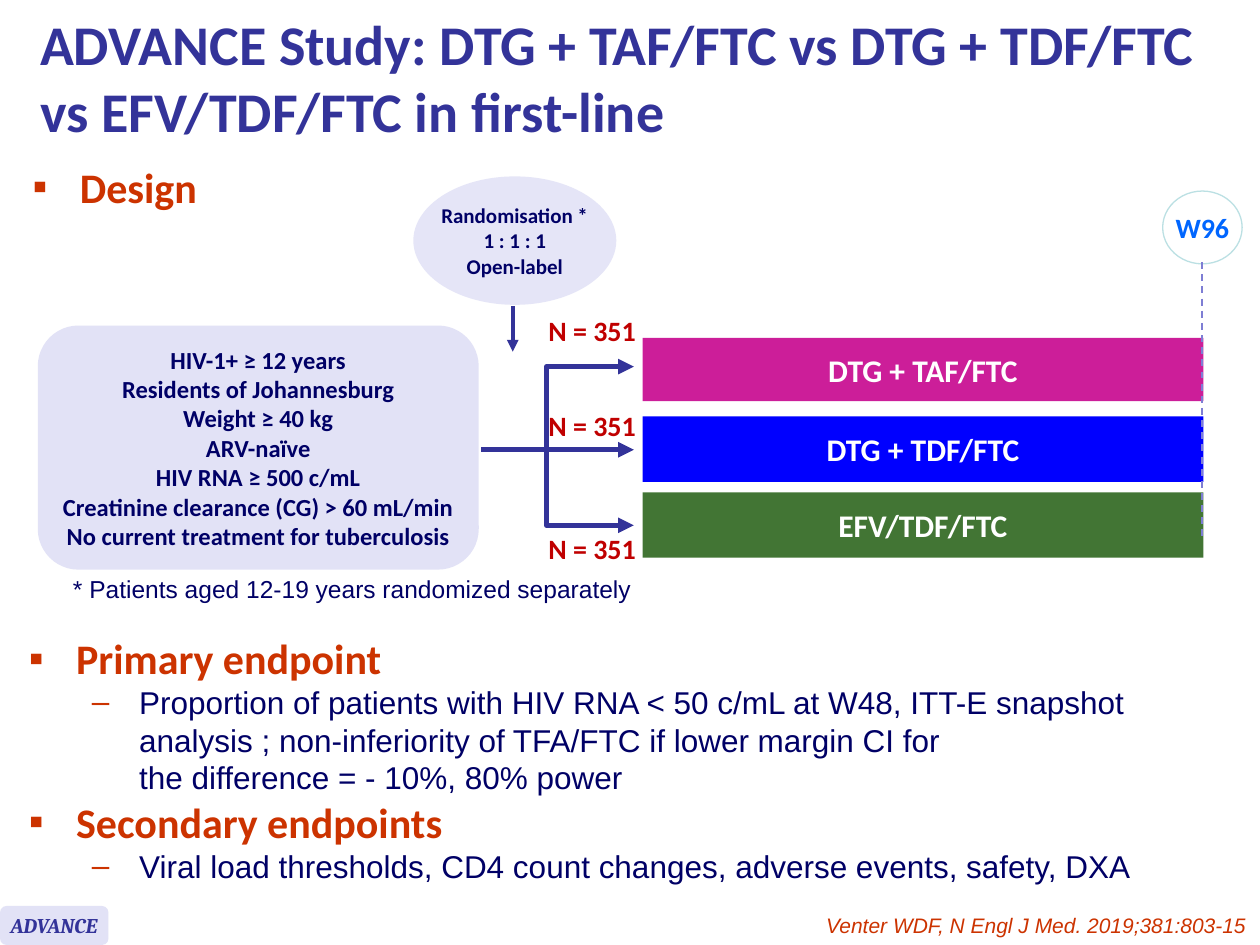
from dataclasses import dataclass

from lxml import etree
from pptx import Presentation
from pptx.dml.color import RGBColor
from pptx.enum import dml, shapes, text
from pptx.oxml import ns
from pptx.util import Pt


@dataclass(frozen=True)
class Theme:
    heading: str = "CC3300"
    body: str = "000066"
    accent: str = "333399"
    count: str = "C00000"
    week: str = "0066FF"
    week_ring: str = "BBE0E3"
    timeline: str = "7E7ED4"
    panel: str = "E2E2F6"
    bubble: str = "E5E5F7"
    white: str = "FFFFFF"
    taf: str = "CC1E99"
    tdf: str = "0000FF"
    efv: str = "427534"
    title_size: int = 32
    heading_size: int = 24
    body_size: int = 18
    count_size: int = 16
    note_size: int = 14
    small_size: int = 12


theme = Theme()
LEFT, CENTER, RIGHT = text.PP_ALIGN.LEFT, text.PP_ALIGN.CENTER, text.PP_ALIGN.RIGHT
TOP, MIDDLE = text.MSO_ANCHOR.TOP, text.MSO_ANCHOR.MIDDLE
OVAL, ROUNDED, BAR = (shapes.MSO_SHAPE.OVAL, shapes.MSO_SHAPE.ROUNDED_RECTANGLE,
                      shapes.MSO_SHAPE.RECTANGLE)

prs = Presentation()
prs.slide_width, prs.slide_height = Pt(720), Pt(540)
slide = prs.slides.add_slide(prs.slide_layouts[6])


def write(box, wording, size, color, font="Calibri", bold=True, italic=False,
          align=CENTER, anchor=MIDDLE, wrap=False, bullets=()):
    frame = box.text_frame
    frame.text = wording
    frame.word_wrap = wrap
    frame.vertical_anchor = anchor
    for paragraph in frame.paragraphs:
        paragraph.alignment = align
        for run in paragraph.runs:
            run.font.size = Pt(size)
            run.font.name = font
            run.font.bold = bold
            run.font.italic = italic
            run.font.color.rgb = RGBColor.from_string(color)


def stroke(line_shape, color, width, arrows=()):
    line_shape.line.color.rgb = RGBColor.from_string(color)
    line_shape.line.width = Pt(width)
    properties = line_shape._element.spPr
    for end in arrows:
        etree.SubElement(line_shape.line._get_or_add_ln(), ns.qn(f"a:{end}"), type="triangle")
    if properties.find(ns.qn("a:effectLst")) is None:
        etree.SubElement(properties, ns.qn("a:effectLst"))


panels = [
    (ROUNDED, 0, 517.7, 62, 22.3, theme.panel, "ADVANCE", theme.small_size, theme.accent),
    (OVAL, 236.2, 100.8, 116, 73.4, theme.bubble,
     "Randomisation *\n1 : 1 : 1\nOpen-label", theme.small_size, theme.body),
    (ROUNDED, 21.6, 186, 252, 139.5, theme.panel,
     "HIV-1+ ≥ 12 years\nResidents of Johannesburg\nWeight ≥ 40 kg\nARV-naïve\n"
     "HIV RNA ≥ 500 c/mL\nCreatinine clearance (CG) > 60 mL/min\n"
     "No current treatment for tuberculosis", theme.note_size, theme.body),
    (OVAL, 664.4, 109.2, 45.4, 41.6, theme.white, "W96", theme.count_size, theme.week),
    (BAR, 367.2, 193, 320.4, 36.2, theme.taf, "DTG + TAF/FTC", theme.body_size, theme.white),
    (BAR, 367.2, 238, 320.4, 37.4, theme.tdf, "DTG + TDF/FTC", theme.body_size, theme.white),
    (BAR, 367.2, 281.3, 320.4, 37.4, theme.efv, "EFV/TDF/FTC", theme.body_size, theme.white),
]
for kind, left, top, width, height, fill, wording, size, color in panels:
    panel = slide.shapes.add_shape(kind, Pt(left), Pt(top), Pt(width), Pt(height))
    panel.shadow.inherit = False
    panel.fill.solid()
    panel.fill.fore_color.rgb = RGBColor.from_string(fill)
    panel.line.fill.background()
    is_badge = wording == "ADVANCE"
    write(panel, wording, size, color, font="Cambria" if is_badge else "Calibri", italic=is_badge)
    if wording == "W96":
        stroke(panel, theme.week_ring, 0.75)

arms = slide.shapes.build_freeform(Pt(362.2), Pt(209.5), scale=1.0)
arms.add_line_segments([(Pt(x), Pt(y)) for x, y in
                        [(312.5, 209.5), (312.5, 300.2), (362.2, 300.2)]], close=False)
bracket = arms.convert_to_shape()
bracket.shadow.inherit = False
bracket.fill.background()
stroke(bracket, theme.accent, 3, ["headEnd", "tailEnd"])

for x1, y1, x2, y2, color, width, arrows in [
    (293, 175, 293, 201, theme.accent, 2.25, ["tailEnd"]),
    (275, 257, 362.2, 257, theme.accent, 3, ["tailEnd"]),
    (687, 149.8, 687, 308.2, theme.timeline, 1, []),
]:
    link = slide.shapes.add_connector(shapes.MSO_CONNECTOR.STRAIGHT, Pt(x1), Pt(y1), Pt(x2), Pt(y2))
    if color == theme.timeline:
        link.line.dash_style = dml.MSO_LINE.DASH
    stroke(link, color, width, arrows)

for top in (175.7, 229.8, 300.2):
    count = slide.shapes.add_textbox(Pt(306), Pt(top), Pt(64.8), Pt(26.6))
    write(count, "N = 351", theme.count_size, theme.count, anchor=TOP)

title = slide.shapes.add_textbox(Pt(15.8), Pt(0), Pt(704.2), Pt(87.1))
write(title, "ADVANCE Study: DTG + TAF/FTC vs DTG + TDF/FTC vs EFV/TDF/FTC in first-line",
      theme.title_size, theme.accent, align=LEFT, wrap=True)

footnote = slide.shapes.add_textbox(Pt(34.6), Pt(324.7), Pt(575.3), Pt(24.5))
write(footnote, "* Patients aged 12-19 years randomized separately", theme.note_size, theme.body,
      font="Arial", bold=False, align=LEFT, anchor=TOP, wrap=True)

citation = slide.shapes.add_textbox(Pt(121), Pt(517.7), Pt(598.3), Pt(21.6))
write(citation, "Venter WDF, N Engl J Med. 2019;381:803-15", theme.small_size, theme.heading,
      font="Arial", bold=False, italic=True, align=RIGHT, anchor=TOP, wrap=True)

outlines = [
    (11.5, 88.6, 212.4, 45.4, [(0, "Design")]),
    (9.4, 357.8, 677.5, 154.8, [
        (0, "Primary endpoint"),
        (1, "Proportion of patients with HIV RNA < 50 c/mL at W48, ITT-E snapshot analysis ; "
            "non-inferiority of TFA/FTC if lower margin CI for \vthe difference = - 10%, 80% power"),
        (0, "Secondary endpoints"),
        (1, "Viral load thresholds, CD4 count changes, adverse events, safety, DXA"),
    ]),
]
for left, top, width, height, entries in outlines:
    outline = slide.shapes.add_textbox(Pt(left), Pt(top), Pt(width), Pt(height))
    outline.text_frame.word_wrap = True
    for index, (level, wording) in enumerate(entries):
        frame = outline.text_frame
        paragraph = frame.add_paragraph() if index else frame.paragraphs[0]
        paragraph.text = wording
        paragraph.level = level
        properties = paragraph._p.get_or_add_pPr()
        properties.set("marL", str(Pt(63 if level else 27)))
        properties.set("indent", str(Pt(-27)))
        bullet_color = etree.SubElement(properties, ns.qn("a:buClr"))
        etree.SubElement(bullet_color, ns.qn("a:srgbClr"), val=theme.heading)
        etree.SubElement(properties, ns.qn("a:buFont"), typeface="Arial")
        etree.SubElement(properties, ns.qn("a:buChar"), char="–" if level else "▪")
        for run in paragraph.runs:
            run.font.size = Pt(theme.body_size if level else theme.heading_size)
            run.font.name = "Arial" if level else "Calibri"
            run.font.bold = level == 0
            run.font.color.rgb = RGBColor.from_string(theme.body if level else theme.heading)

prs.save("out.pptx")
